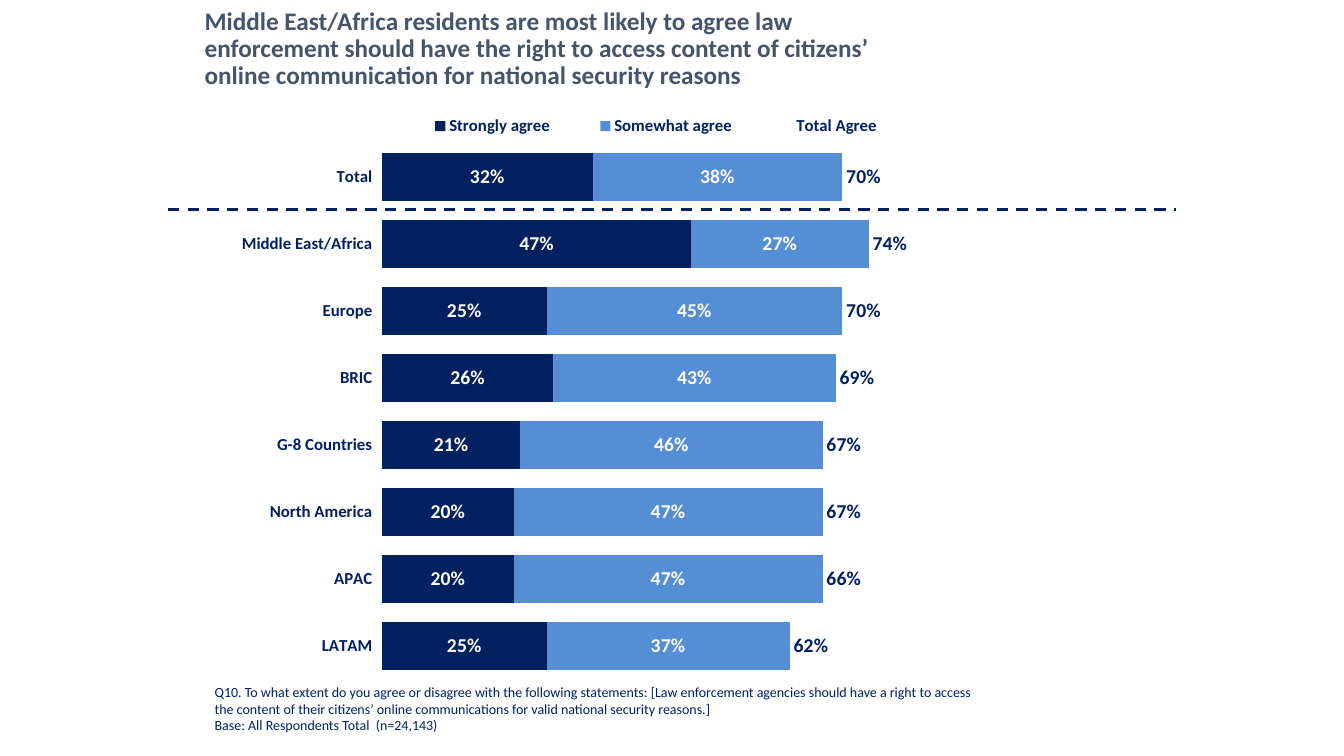
from lxml import etree
from pptx import Presentation
from pptx.chart.data import CategoryChartData
from pptx.dml.color import RGBColor
from pptx.enum.chart import XL_CHART_TYPE, XL_LABEL_POSITION, XL_LEGEND_POSITION
from pptx.enum.dml import MSO_LINE
from pptx.enum.shapes import MSO_CONNECTOR
from pptx.enum.text import MSO_ANCHOR, MSO_AUTO_SIZE
from pptx.oxml.ns import qn
from pptx.util import Inches, Pt

BAR_STACKED = XL_CHART_TYPE.BAR_STACKED
CENTER = XL_LABEL_POSITION.CENTER
INSIDE_BASE = XL_LABEL_POSITION.INSIDE_BASE
LEGEND_TOP = XL_LEGEND_POSITION.TOP
STRAIGHT = MSO_CONNECTOR.STRAIGHT
DASH = MSO_LINE.DASH
TOP, MIDDLE = MSO_ANCHOR.TOP, MSO_ANCHOR.MIDDLE
GROW = MSO_AUTO_SIZE.SHAPE_TO_FIT_TEXT

FONT = "Calibri"
NAVY, BLUE, SLATE, WHITE, BLACK = "002060", "558ED5", "44546A", "FFFFFF", "000000"

TITLE = ("Middle East/Africa residents are most likely to agree law enforcement should have "
         "the right to access content of citizens’ online communication for national security reasons")
FOOTNOTES = [
    "Q10. To what extent do you agree or disagree with the following statements: [Law enforcement "
    "agencies should have a right to access the content of their citizens’ online communications "
    "for valid national security reasons.]",
    "Base: All Respondents Total  (n=24,143)",
]
REGIONS = ["Total", "Middle East/Africa", "Europe", "BRIC", "G-8 Countries",
           "North America", "APAC", "LATAM"]
# name, values, fill, label colour, label position
SERIES = [
    ("Strongly agree", [0.32, 0.47, 0.25, 0.26, 0.21, 0.2, 0.2, 0.25], NAVY, WHITE, CENTER),
    ("Somewhat agree", [0.38, 0.27, 0.45, 0.43, 0.46, 0.47, 0.47, 0.37], BLUE, WHITE, CENTER),
    ("Total Agree", [0.7, 0.74, 0.7, 0.69, 0.67, 0.67, 0.66, 0.62], None, NAVY, INSIDE_BASE),
]


def color(hex_string):
    return RGBColor.from_string(hex_string)


def set_values(target, values):
    for name, value in values.items():
        setattr(target, name, value)


def set_layout(parent, index, box, inner=False):
    """Place a chart part by shares of the chart: left, top, width, height."""
    for old_layout in parent.findall(qn("c:layout")):
        parent.remove(old_layout)
    layout = etree.Element(qn("c:layout"))
    manual = etree.SubElement(layout, qn("c:manualLayout"))
    settings = [("layoutTarget", "inner")] if inner else []
    settings += [("xMode", "edge"), ("yMode", "edge"), *zip("xywh", box)]
    for name, value in settings:
        etree.SubElement(manual, qn(f"c:{name}")).set("val", str(value))
    parent.insert(index, layout)


class SlideBuilder:
    """Places elements on a grid of 100 columns by 100 rows."""

    def __init__(self, presentation):
        self.slide = presentation.slides.add_slide(presentation.slide_layouts[6])
        self.column = presentation.slide_width / 100
        self.row = presentation.slide_height / 100

    def place(self, columns, rows):
        return round(columns * self.column), round(rows * self.row)

    def style_font(self, font, size, hex_string, bold=False):
        set_values(font, {"name": FONT, "size": Pt(size), "bold": bold})
        font.color.rgb = color(hex_string)

    def text(self, box, lines, size, hex_string, bold=False, spacing=None, **frame_format):
        shape = self.slide.shapes.add_textbox(*self.place(*box[:2]), *self.place(*box[2:]))
        frame = shape.text_frame
        set_values(frame, {"word_wrap": True, "auto_size": GROW, **frame_format})
        for index, line in enumerate(lines):
            paragraph = frame.add_paragraph() if index else frame.paragraphs[0]
            if spacing:
                paragraph.line_spacing = spacing
            run = paragraph.add_run()
            run.text = line
            self.style_font(run.font, size, hex_string, bold)

    def dashed_line(self, start, end, hex_string, width):
        connector = self.slide.shapes.add_connector(
            STRAIGHT, *self.place(*start), *self.place(*end))
        set_values(connector.line, {"width": Pt(width), "dash_style": DASH})
        connector.line.color.rgb = color(hex_string)
        etree.SubElement(connector._element.spPr, qn("a:effectLst"))

    def stacked_bars(self, box, categories, series_rows, plot_box, legend_box):
        data = CategoryChartData(number_format="0%")
        data.categories = categories
        for name, values, *_ in series_rows:
            data.add_series(name, values)
        chart = self.slide.shapes.add_chart(
            BAR_STACKED, *self.place(*box[:2]), *self.place(*box[2:]), data).chart
        self.style_font(chart.font, 18, BLACK)
        set_values(chart, {"has_title": False, "has_legend": True})
        set_values(chart.legend, {"position": LEGEND_TOP, "include_in_layout": False})
        self.style_font(chart.legend.font, 12, NAVY, True)

        category_axis, value_axis = chart.category_axis, chart.value_axis
        category_axis.reverse_order = True
        category_axis.format.line.fill.background()
        self.style_font(category_axis.tick_labels.font, 12, NAVY, True)
        set_values(value_axis, {"minimum_scale": 0, "maximum_scale": 1,
                                "has_major_gridlines": False, "visible": False})

        plot = chart.plots[0]
        set_values(plot, {"gap_width": 42, "overlap": 100, "vary_by_categories": False})
        for series, (_, _, fill, label_color, position) in zip(plot.series, series_rows):
            if fill:
                series.format.fill.solid()
                series.format.fill.fore_color.rgb = color(fill)
            else:
                series.format.fill.background()
            labels = series.data_labels
            set_values(labels, {"show_value": True, "position": position,
                                "number_format": "0%", "number_format_is_linked": False})
            self.style_font(labels.font, 14, label_color, True)

        chart_element = chart._chartSpace.chart
        set_layout(chart_element.plotArea, 0, plot_box, inner=True)
        set_layout(chart_element.find(qn("c:legend")), 1, legend_box)


def main():
    presentation = Presentation()
    set_values(presentation, {"slide_width": Inches(13.33), "slide_height": Inches(7.5)})
    builder = SlideBuilder(presentation)
    builder.stacked_bars((15.9, 14.4, 62.7, 76.27), REGIONS, SERIES,
                         plot_box=(0.2, 0.06, 0.78, 0.93),
                         legend_box=(0.21, 0.0, 0.63, 0.06))
    builder.text((15.23, 89.73, 58.43, 8.13), FOOTNOTES, 10, NAVY, vertical_anchor=TOP)
    builder.dashed_line((12.5, 27.75), (87.5, 27.75), NAVY, 2)
    builder.text((15.23, 1.07, 54.15, 10.93), [TITLE], 18, SLATE, bold=True, spacing=0.9,
                 vertical_anchor=MIDDLE, margin_left=0, margin_top=0,
                 margin_right=Inches(0.3), margin_bottom=0)
    presentation.save("out.pptx")


if __name__ == "__main__":
    main()
